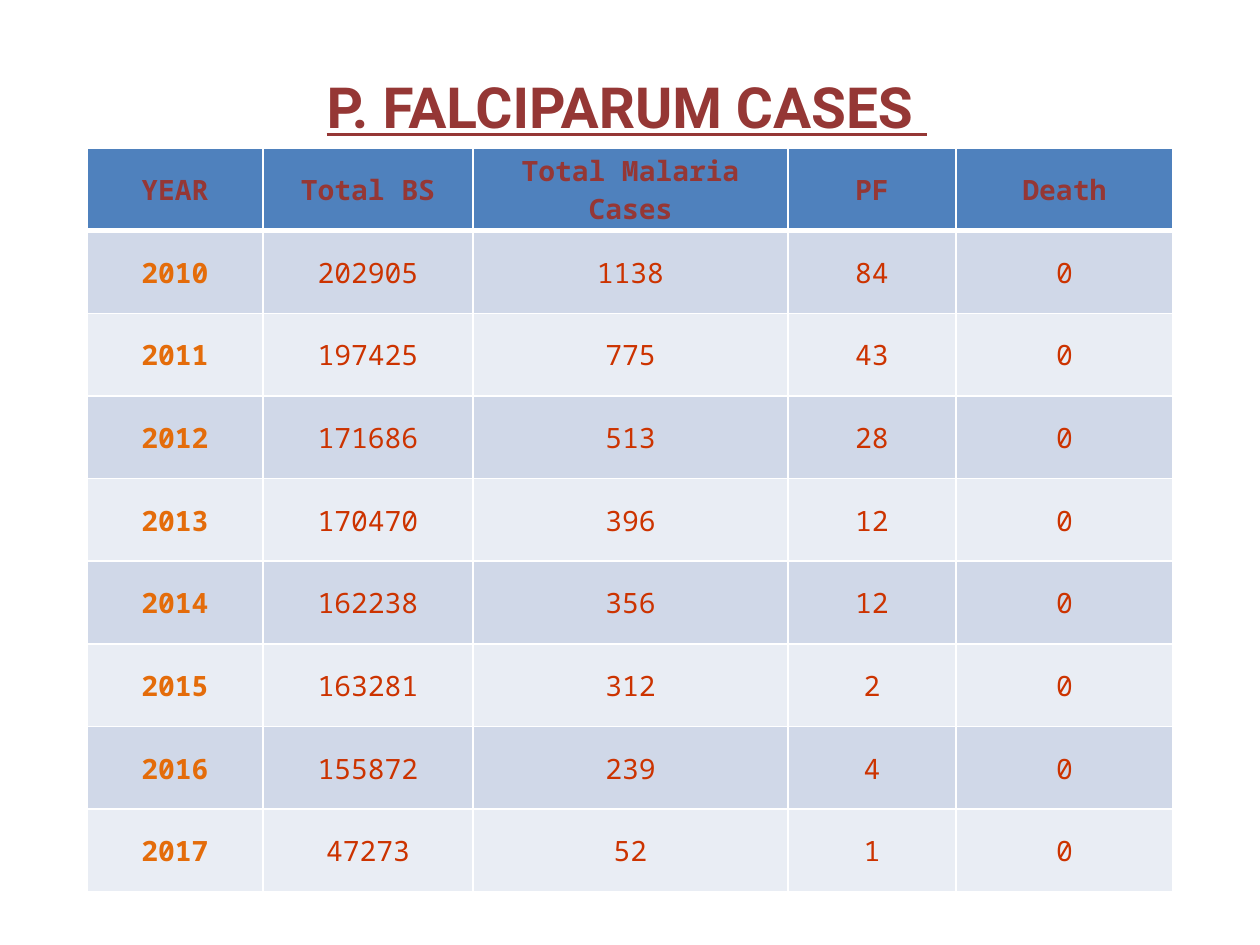
from lxml import etree
from pptx import Presentation
from pptx.dml.color import RGBColor
from pptx.enum.text import MSO_ANCHOR, MSO_AUTO_SIZE, PP_ALIGN
from pptx.oxml.ns import qn
from pptx.util import Pt

CENTER = PP_ALIGN.CENTER
MIDDLE = MSO_ANCHOR.MIDDLE
NO_AUTOFIT = MSO_AUTO_SIZE.NONE

MAROON = RGBColor(0x95, 0x37, 0x35)
ORANGE = RGBColor(0xE4, 0x6C, 0x0A)
RED = RGBColor(0xCC, 0x33, 0x00)
BLUE = RGBColor(0x4F, 0x81, 0xBD)
BAND_DARK = RGBColor(0xD0, 0xD8, 0xE8)
BAND_LIGHT = RGBColor(0xE9, 0xED, 0xF4)
WHITE = RGBColor(0xFF, 0xFF, 0xFF)

TITLE_FONT = "Roboto"
TABLE_FONT = "Noto Sans Mono"
PX_PER_INCH = 126
TITLE_BOX = (84, 63, 1086, 86)
CASES_BOX = (87, 148, 1086, 744)
COLUMN_WIDTHS = (176, 210, 315, 168, 217)
HEADINGS = ("YEAR", "Total BS", "Total Malaria Cases", "PF", "Death")
YEARLY_CASES = (
    (2010, 202905, 1138, 84, 0),
    (2011, 197425, 775, 43, 0),
    (2012, 171686, 513, 28, 0),
    (2013, 170470, 396, 12, 0),
    (2014, 162238, 356, 12, 0),
    (2015, 163281, 312, 2, 0),
    (2016, 155872, 239, 4, 0),
    (2017, 47273, 52, 1, 0),
)


def px(length):
    return round(length * 914400 / PX_PER_INCH)


def add_run(paragraph, text, font, size, color, bold, underline=False):
    paragraph.alignment = CENTER
    run = paragraph.add_run()
    run.text = text
    run.font.name = font
    run.font.size = Pt(size)
    run.font.color.rgb = color
    run.font.bold = bold
    run.font.underline = underline


def set_borders(cell, bottom_width):
    properties = cell._tc.get_or_add_tcPr()
    for side, width in (("L", 1), ("R", 1), ("T", 1), ("B", bottom_width)):
        line = etree.SubElement(properties, qn(f"a:ln{side}"), w=str(Pt(width)))
        fill = etree.SubElement(line, qn("a:solidFill"))
        etree.SubElement(fill, qn("a:srgbClr"), val=str(WHITE))


def place_title(slide, box):
    title = slide.shapes.title
    title.left, title.top, title.width, title.height = map(px, box)
    frame = title.text_frame
    frame.word_wrap = True
    frame.auto_size = NO_AUTOFIT
    frame.vertical_anchor = MIDDLE
    add_run(frame.paragraphs[0], "P. FALCIPARUM CASES ", TITLE_FONT, 32.4,
            MAROON, True, True)


def fill_cell(cell, text, background, color, bold, bottom_width):
    cell.margin_left = cell.margin_right = cell.margin_top = px(1)
    cell.margin_bottom = 0
    cell.vertical_anchor = MIDDLE
    set_borders(cell, bottom_width)
    cell.fill.solid()
    cell.fill.fore_color.rgb = background
    add_run(cell.text_frame.paragraphs[0], text, TABLE_FONT, 16, color, bold)


def add_cases_table(slide, box):
    rows = (HEADINGS,) + YEARLY_CASES
    left, top, width, height = map(px, box)
    table = slide.shapes.add_table(
        len(rows), len(HEADINGS), left, top, width, height).table
    for column, column_width in zip(table.columns, COLUMN_WIDTHS):
        column.width = px(column_width)
    for row_index, values in enumerate(rows):
        is_heading = row_index == 0
        band = BAND_DARK if row_index % 2 else BAND_LIGHT
        for column_index, value in enumerate(values):
            is_year = column_index == 0
            color = MAROON if is_heading else ORANGE if is_year else RED
            fill_cell(table.cell(row_index, column_index), str(value),
                      BLUE if is_heading else band, color,
                      is_heading or is_year, 3 if is_heading else 1)


def main():
    deck = Presentation()
    deck.slide_width = px(1260)
    deck.slide_height = px(945)
    slide = deck.slides.add_slide(deck.slide_layouts[5])
    place_title(slide, TITLE_BOX)
    add_cases_table(slide, CASES_BOX)
    deck.save("out.pptx")


if __name__ == "__main__":
    main()
